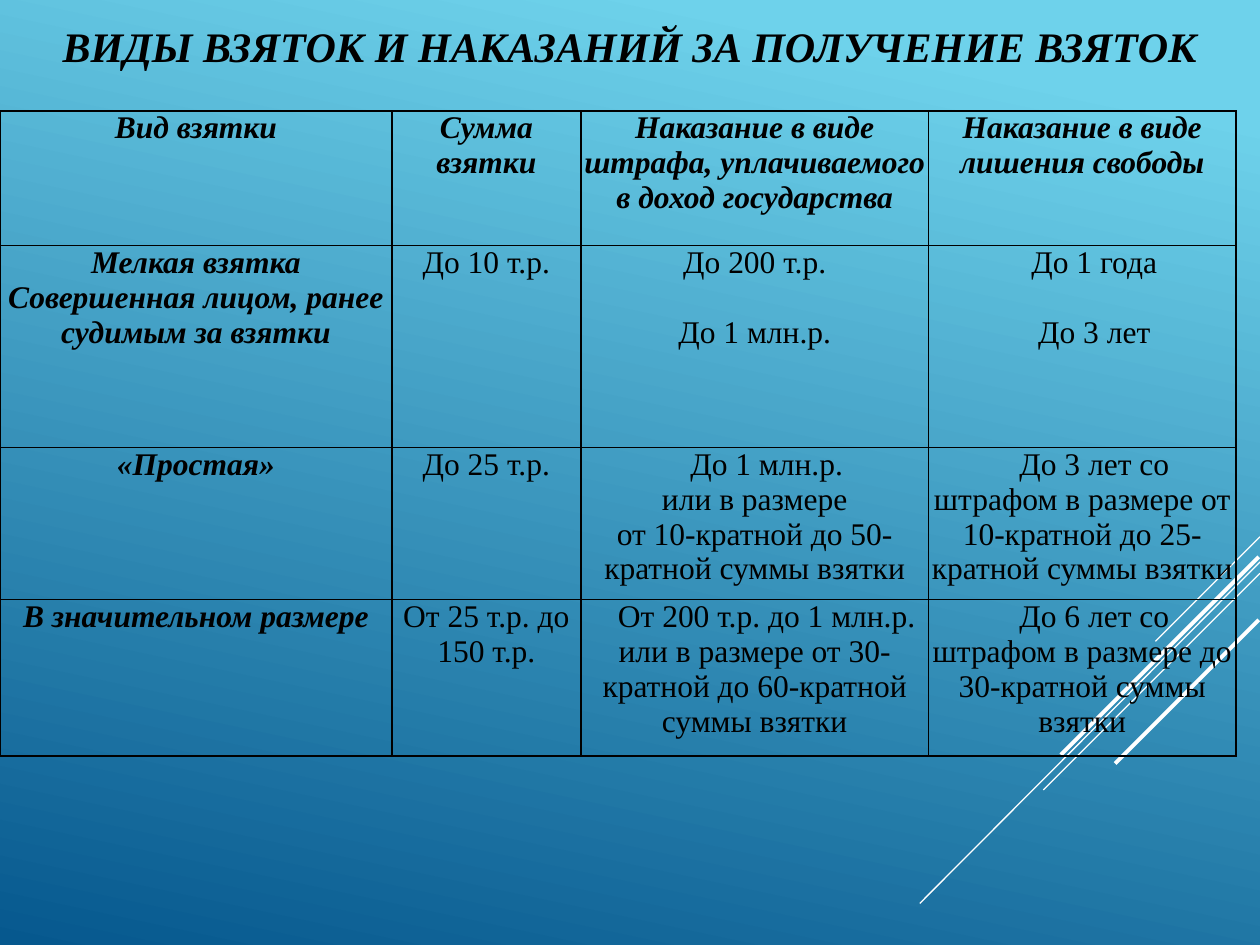
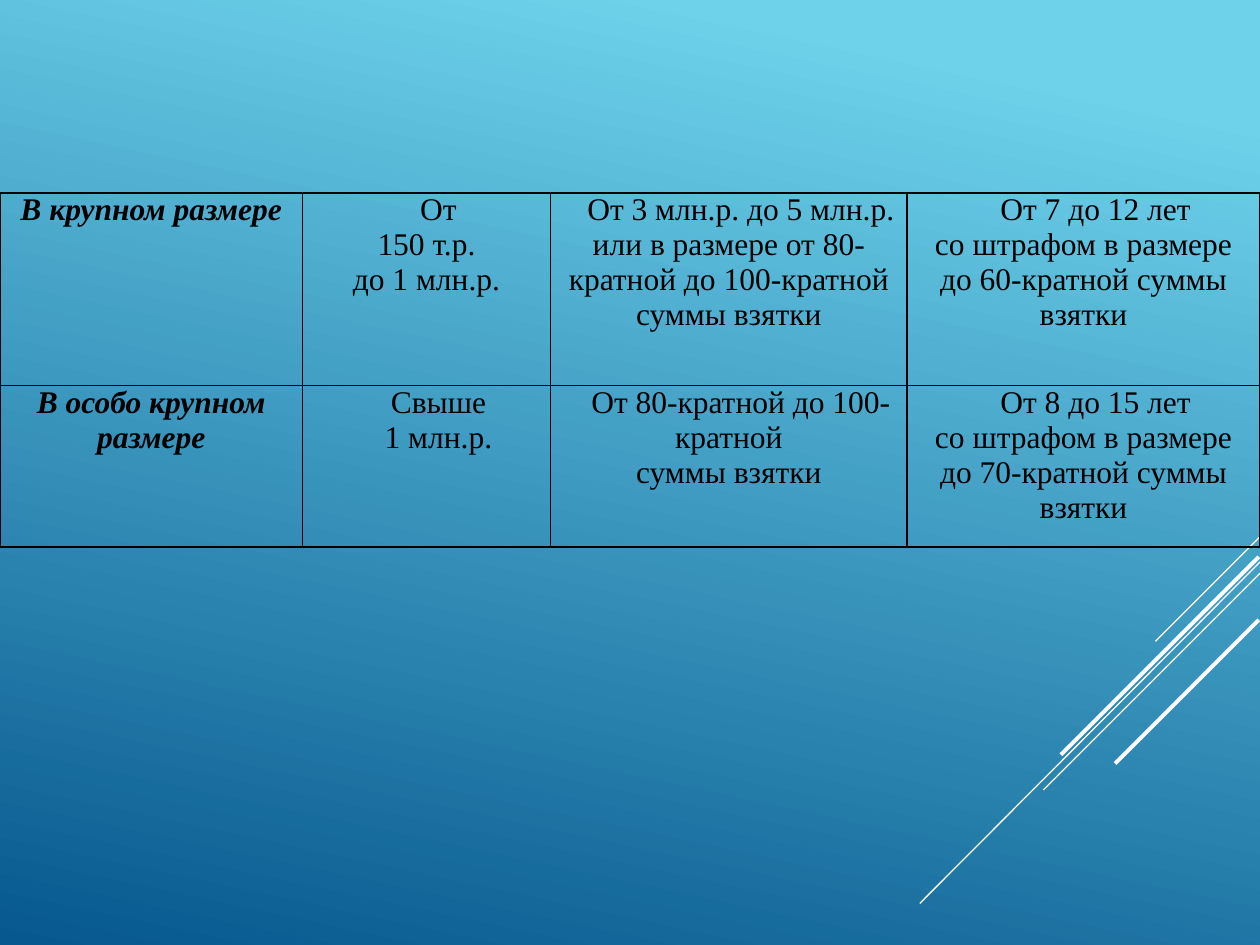
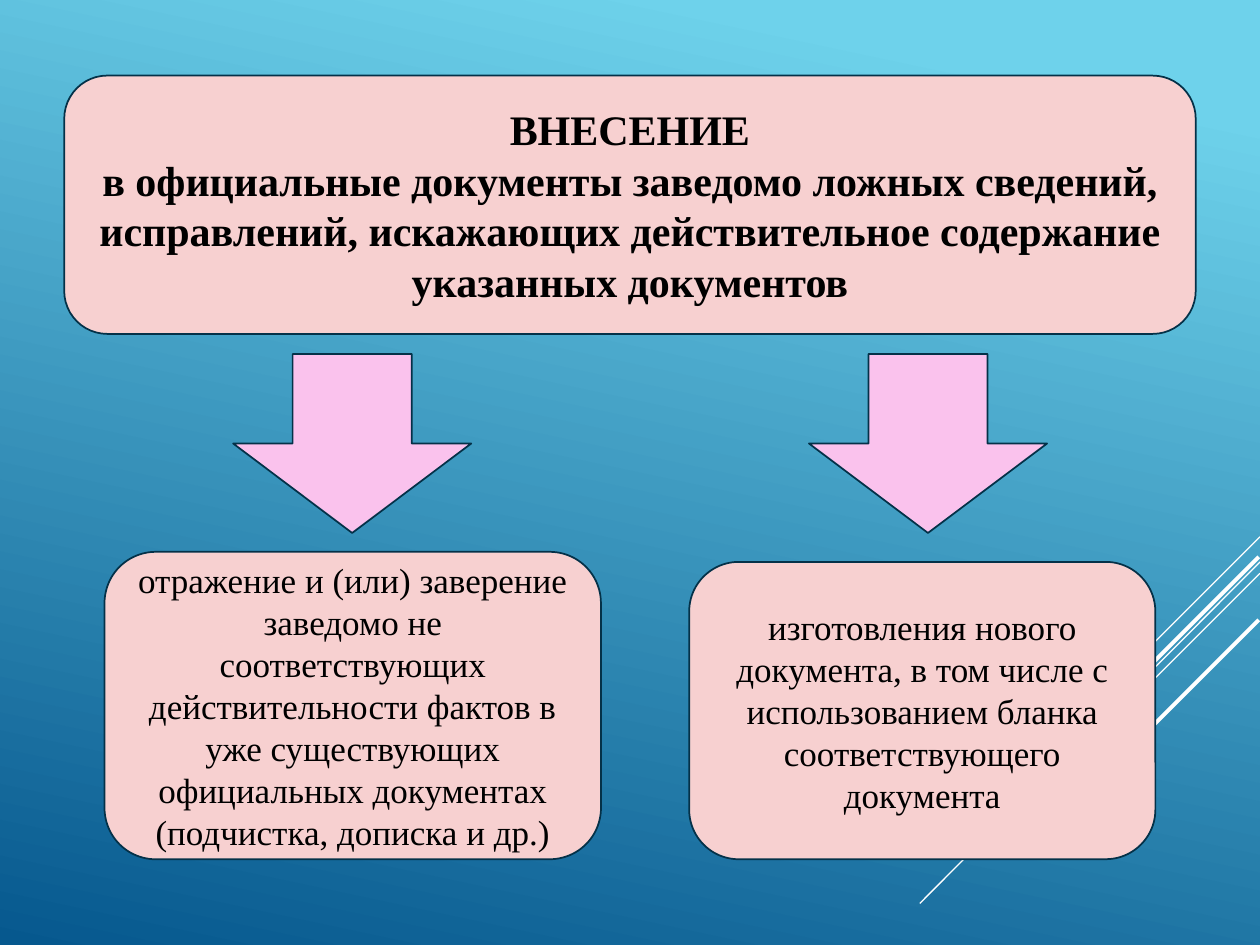
from lxml.etree import SubElement
from pptx import Presentation
from pptx.dml.color import RGBColor
from pptx.enum.shapes import MSO_CONNECTOR, MSO_SHAPE
from pptx.enum.text import MSO_ANCHOR, MSO_AUTO_SIZE, PP_ALIGN
from pptx.oxml import parse_xml
from pptx.oxml.ns import nsdecls, qn
from pptx.util import Inches, Pt

BLACK, WHITE, OUTLINE = "000000", "FFFFFF", "043148"
SKY, DEEP_BLUE = "6ED2EB", "06588E"
ROSE, PINK = "F7D0D0", "FAC2ED"
CELL_FORMAT = {"margin_left": Inches(0.01), "margin_right": Inches(0.01),
               "margin_top": 0, "margin_bottom": 0}
PLAIN_TABLE = {"first_row": False, "horz_banding": False}
TITLE_FORMAT = {"word_wrap": True, "auto_size": MSO_AUTO_SIZE.NONE,
                "vertical_anchor": MSO_ANCHOR.TOP, "margin_top": Inches(0.05),
                "margin_bottom": 0}


def color(value):
    return RGBColor.from_string(value)


def write(paragraph, text, size, bold=False, italic=False):
    run = paragraph.add_run()
    run.text = text
    paragraph.alignment = PP_ALIGN.CENTER
    font_format = {"name": "Times New Roman", "size": Pt(size), "bold": bold, "italic": italic}
    for key, value in font_format.items():
        setattr(run.font, key, value)
    run.font.color.rgb = color(BLACK)


deck = Presentation()
deck.slide_width, deck.slide_height = Inches(10), Inches(7.5)
title_only, blank = deck.slide_layouts[5], deck.slide_layouts[6]
bribes, large_bribes, forgery = [deck.slides.add_slide(layout)
                                 for layout in (title_only, blank, blank)]

# Shared background gradient
master = deck.slide_master
backdrop = master.background.fill
backdrop.gradient()
backdrop.gradient_angle = 360 - 102
for stop, (position, shade) in zip(backdrop.gradient_stops, [(0.1, SKY), (1, DEEP_BLUE)]):
    stop.position = position
    stop.color.rgb = color(shade)

# Shared diagonal rays, moved to the master
rays = [
    (10, 4.26, 9.17, 5.09, 0.75),
    (10, 4.46, 7.3, 7.17, 0.75),
    (10, 4.55, 8.28, 6.27, 0.75),
    (9.99, 4.42, 8.42, 5.99, 2.25),
    (9.99, 4.92, 8.85, 6.06, 2.25),
]
for number, (*ends, width) in enumerate(rays):
    ray = bribes.shapes.add_connector(MSO_CONNECTOR.STRAIGHT, *map(Inches, ends))
    ray.line.color.rgb = color(WHITE)
    ray.line.width = Pt(width)
    SubElement(ray.element.spPr, qn("a:effectLst"))
    ray.element.xpath(".//p:cNvPr")[0].set("id", str(100 + number))
    master.shapes.element.append(ray.element)

# Title of the first slide
title = bribes.shapes.title
title.left, title.top, title.width, title.height = map(Inches, (0, 0.11, 10, 0.76))
for key, value in TITLE_FORMAT.items():
    setattr(title.text_frame, key, value)
write(title.text_frame.paragraphs[0], "ВИДЫ ВЗЯТОК И НАКАЗАНИЙ ЗА ПОЛУЧЕНИЕ ВЗЯТОК", 24, True, True)

# Penalty tables: ">" marks an indented line, an empty line a gap before the next
bribe_rows = [
    ["Вид взятки", "Сумма взятки",
     "Наказание в виде штрафа, уплачиваемого в доход государства",
     "Наказание в виде лишения свободы"],
    ["Мелкая взятка\nСовершенная лицом, ранее судимым за взятки", "До 10 т.р.",
     "До 200 т.р.\n\nДо 1 млн.р.", ">До 1 года\n\n>До 3 лет"],
    ["«Простая»", "До 25 т.р.",
     ">До 1 млн.р.\nили в размере\nот 10-кратной до 50-кратной суммы взятки",
     ">До 3 лет со штрафом в размере от 10-кратной до 25-кратной суммы взятки"],
    ["В значительном размере", "От 25 т.р. до 150 т.р.",
     ">От 200 т.р. до 1 млн.р. или в размере от 30-кратной до 60-кратной\nсуммы взятки",
     ">До 6 лет со штрафом в размере до 30-кратной суммы взятки"],
]
large_bribe_rows = [
    ["В крупном размере", ">От\n150 т.р.\nдо 1 млн.р.",
     ">От 3 млн.р. до 5 млн.р. или в размере от 80-кратной до 100-кратной\nсуммы взятки",
     ">От 7 до 12 лет\nсо штрафом в размере\nдо 60-кратной суммы взятки"],
    ["В особо крупном размере", ">Свыше\n>1 млн.р.",
     ">От 80-кратной до 100-кратной\nсуммы взятки",
     ">От 8 до 15 лет\nсо штрафом в размере\nдо 70-кратной суммы взятки"],
]
penalty_tables = [
    (bribes, 0.88, [3.11, 1.5, 2.76, 2.44], [1.07, 1.6, 1.21, 1.24], bribe_rows, True),
    (large_bribes, 1.53, [2.4, 1.97, 2.83, 2.8], [1.53, 1.28], large_bribe_rows, False),
]
for slide, top, widths, heights, rows, has_heading in penalty_tables:
    penalties = slide.shapes.add_table(
        len(rows), len(widths), 0, Inches(top),
        Inches(sum(widths)), Inches(sum(heights))).table
    for key, value in PLAIN_TABLE.items():
        setattr(penalties, key, value)
    for column, width in zip(penalties.columns, widths):
        column.width = Inches(width)
    for row, height in zip(penalties.rows, heights):
        row.height = Inches(height)
    for r, row_texts in enumerate(rows):
        for c, text in enumerate(row_texts):
            cell = penalties.cell(r, c)
            for key, value in CELL_FORMAT.items():
                setattr(cell, key, value)
            for side in "LRTB":
                cell._tc.get_or_add_tcPr().append(parse_xml(
                    f'<a:ln{side} {nsdecls("a")} w="12700"><a:solidFill>'
                    f'<a:srgbClr val="{BLACK}"/></a:solidFill></a:ln{side}>'))
            cell.fill.background()
            emphasis = c == 0 or (has_heading and r == 0)
            paragraph = cell.text_frame.paragraphs[0]
            gap = False
            for number, line in enumerate(text.split("\n")):
                if not line:
                    gap = True
                    continue
                if number:
                    paragraph = cell.text_frame.add_paragraph()
                write(paragraph, line.lstrip(">"), 18, emphasis, emphasis)
                if line.startswith(">"):
                    paragraph._p.get_or_add_pPr().set("indent", str(Inches(0.19)))
                if gap:
                    paragraph.space_before = Pt(20)
                    gap = False

# Forgery scheme: the act, two arrows, two ways of doing it
act = ["ВНЕСЕНИЕ",
       "в официальные документы заведомо ложных сведений, исправлений, "
       "искажающих действительное содержание указанных документов"]
altering = ["отражение и (или) заверение заведомо не соответствующих действительности "
            "фактов в уже существующих официальных документах (подчистка, дописка и др.)"]
producing = ["изготовления нового документа, в том числе с использованием бланка "
             "соответствующего документа"]
scheme = [
    (MSO_SHAPE.ROUNDED_RECTANGLE, (0.51, 0.6, 8.98, 2.05), ROSE, act, 24, True),
    (MSO_SHAPE.DOWN_ARROW, (1.85, 2.81, 1.89, 1.42), PINK, [], 20, False),
    (MSO_SHAPE.DOWN_ARROW, (6.42, 2.81, 1.89, 1.42), PINK, [], 20, False),
    (MSO_SHAPE.ROUNDED_RECTANGLE, (0.83, 4.38, 3.94, 2.44), ROSE, altering, 20, False),
    (MSO_SHAPE.ROUNDED_RECTANGLE, (5.47, 4.46, 3.7, 2.36), ROSE, producing, 20, False),
]
for kind, place, shade, lines, size, bold in scheme:
    part = forgery.shapes.add_shape(kind, *map(Inches, place))
    part.shadow.inherit = False
    part.fill.solid()
    part.fill.fore_color.rgb = color(shade)
    part.line.color.rgb = color(OUTLINE)
    part.line.width = Pt(1)
    frame = part.text_frame
    frame.word_wrap = True
    frame.vertical_anchor = MSO_ANCHOR.MIDDLE
    for number, line in enumerate(lines):
        paragraph = frame.add_paragraph() if number else frame.paragraphs[0]
        write(paragraph, line, size, bold)

deck.save("out.pptx")
